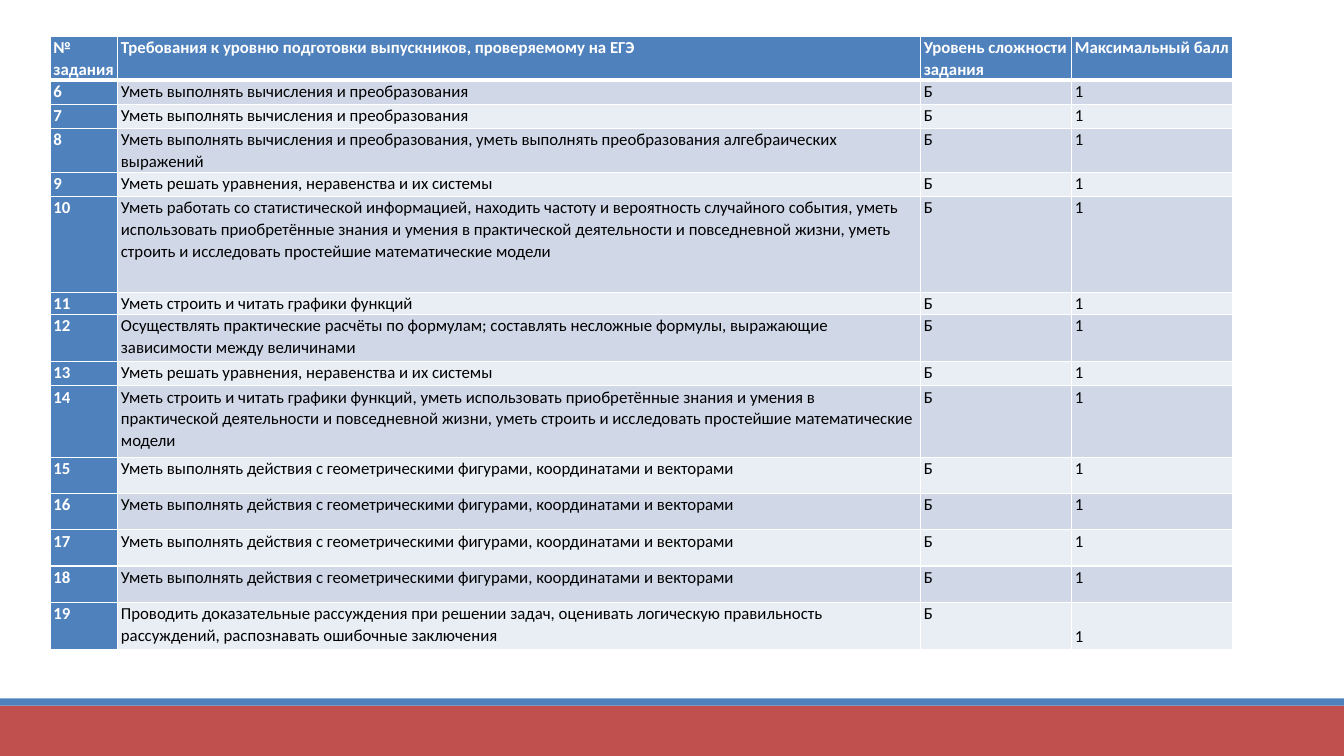
import pptx
import pptx.util
import pptx.dml.color
import pptx.enum.shapes
import pptx.enum.text
import lxml.etree
from pptx.util import Inches

BLUE, RED, WHITE, BLACK = "4F81BD", "C0504D", "FFFFFF", "000000"
BANDS = ("E9EDF4", "D0D8E8")
COLUMN_WIDTHS = (0.67, 7.97, 1.5, 1.6)
HEADER = ("№ задания", "Требования к уровню подготовки выпускников, проверяемому на ЕГЭ",
          "Уровень сложности задания", "Максимальный балл")
HEADER_HEIGHT = 0.36
FIRST_TASK = 6

CALCULATE = "Уметь выполнять вычисления и преобразования"
EQUATIONS = "Уметь решать уравнения, неравенства и их системы"
GRAPHS = "Уметь строить и читать графики функций"
GEOMETRY = "Уметь выполнять действия с геометрическими фигурами, координатами и векторами"
PRACTICE = ("уметь использовать приобретённые знания и умения в практической деятельности "
            "и повседневной жизни, уметь строить и исследовать простейшие математические модели")

# Requirement and row height for each task, numbered from FIRST_TASK
TASKS = [
    (CALCULATE, 0.24),
    (CALCULATE, 0.24),
    (CALCULATE + ", уметь выполнять преобразования алгебраических выражений", 0.36),
    (EQUATIONS, 0.24),
    ("Уметь работать со статистической информацией, находить частоту и вероятность "
     "случайного события, " + PRACTICE, 0.95),
    (GRAPHS, 0.12),
    ("Осуществлять практические расчёты по формулам; составлять несложные формулы, "
     "выражающие зависимости между величинами", 0.47),
    (EQUATIONS, 0.24),
    (GRAPHS + ", " + PRACTICE, 0.71),
    *[(GEOMETRY, 0.36)] * 4,
    ("Проводить доказательные рассуждения при решении задач, оценивать логическую "
     "правильность рассуждений, распознавать ошибочные заключения", 0.47),
]


def rgb(color):
    return pptx.dml.color.RGBColor.from_string(color)


def set_borders(cell, top, bottom):
    tc_pr = cell._tc.get_or_add_tcPr()
    for side, width in {"L": 1, "R": 1, "T": top, "B": bottom}.items():
        line = lxml.etree.SubElement(tc_pr, pptx.oxml.ns.qn(f"a:ln{side}"),
                                     w=str(pptx.util.Pt(width)))
        fill = lxml.etree.SubElement(line, pptx.oxml.ns.qn("a:solidFill"))
        lxml.etree.SubElement(fill, pptx.oxml.ns.qn("a:srgbClr"), val=WHITE)


def fill_cell(cell, text, fill, color, bold):
    margins = {"margin_left": 0.03, "margin_top": 0, "margin_right": 0.03, "margin_bottom": 0}
    for name, value in margins.items():
        setattr(cell, name, Inches(value))
    cell.fill.solid()
    cell.fill.fore_color.rgb = rgb(fill)
    p = cell.text_frame.paragraphs[0]
    p.line_spacing = 1.07
    r = p.add_run()
    r.text = text
    font_format = {"name": "Calibri", "size": pptx.util.Pt(12), "bold": bold}
    for name, value in font_format.items():
        setattr(r.font, name, value)
    r.font.color.rgb = rgb(color)


def add_task_table(s, left, top, width):
    rows = [HEADER] + [(str(number), requirement, "Б", "1")
                       for number, (requirement, _) in enumerate(TASKS, FIRST_TASK)]
    heights = [HEADER_HEIGHT] + [height for _, height in TASKS]
    table = s.shapes.add_table(len(rows), len(HEADER), Inches(left), Inches(top),
                               Inches(width), Inches(sum(heights))).table
    for column, share in zip(table.columns, COLUMN_WIDTHS):
        column.width = Inches(width * share / sum(COLUMN_WIDTHS))
    for i, (values, height) in enumerate(zip(rows, heights)):
        table.rows[i].height = Inches(height)
        for j, text in enumerate(values):
            cell = table.cell(i, j)
            heading = i == 0 or j == 0
            # Thick rule between the header and the first task
            set_borders(cell, top=3 if i == 1 else 1, bottom=3 if i == 0 else 1)
            fill_cell(cell, text, BLUE if heading else BANDS[i % 2],
                      WHITE if heading else BLACK, heading)
    # The last score stands on the second line of its row
    last = table.cell(len(rows) - 1, len(HEADER) - 1)
    last.vertical_anchor = pptx.enum.text.MSO_ANCHOR.BOTTOM
    last.margin_bottom = Inches(0.03)


def add_footer(s, left, top, width, height):
    stripe = 0.07
    bands = ((top + stripe, height - stripe, RED), (top, stripe, BLUE))
    for band_top, band_height, color in bands:
        band = s.shapes.add_shape(pptx.enum.shapes.MSO_SHAPE.RECTANGLE, Inches(left),
                                  Inches(band_top), Inches(width), Inches(band_height))
        band.shadow.inherit = False
        band.fill.solid()
        band.fill.fore_color.rgb = rgb(color)
        band.line.fill.background()


def main():
    prs = pptx.Presentation()
    prs.slide_width, prs.slide_height = Inches(13.33), Inches(7.5)
    s = prs.slides.add_slide(prs.slide_layouts[6])
    add_footer(s, 0, 6.93, 13.33, 0.57)
    add_task_table(s, 0.5, 0.36, 11.73)
    prs.save("out.pptx")


if __name__ == "__main__":
    main()
